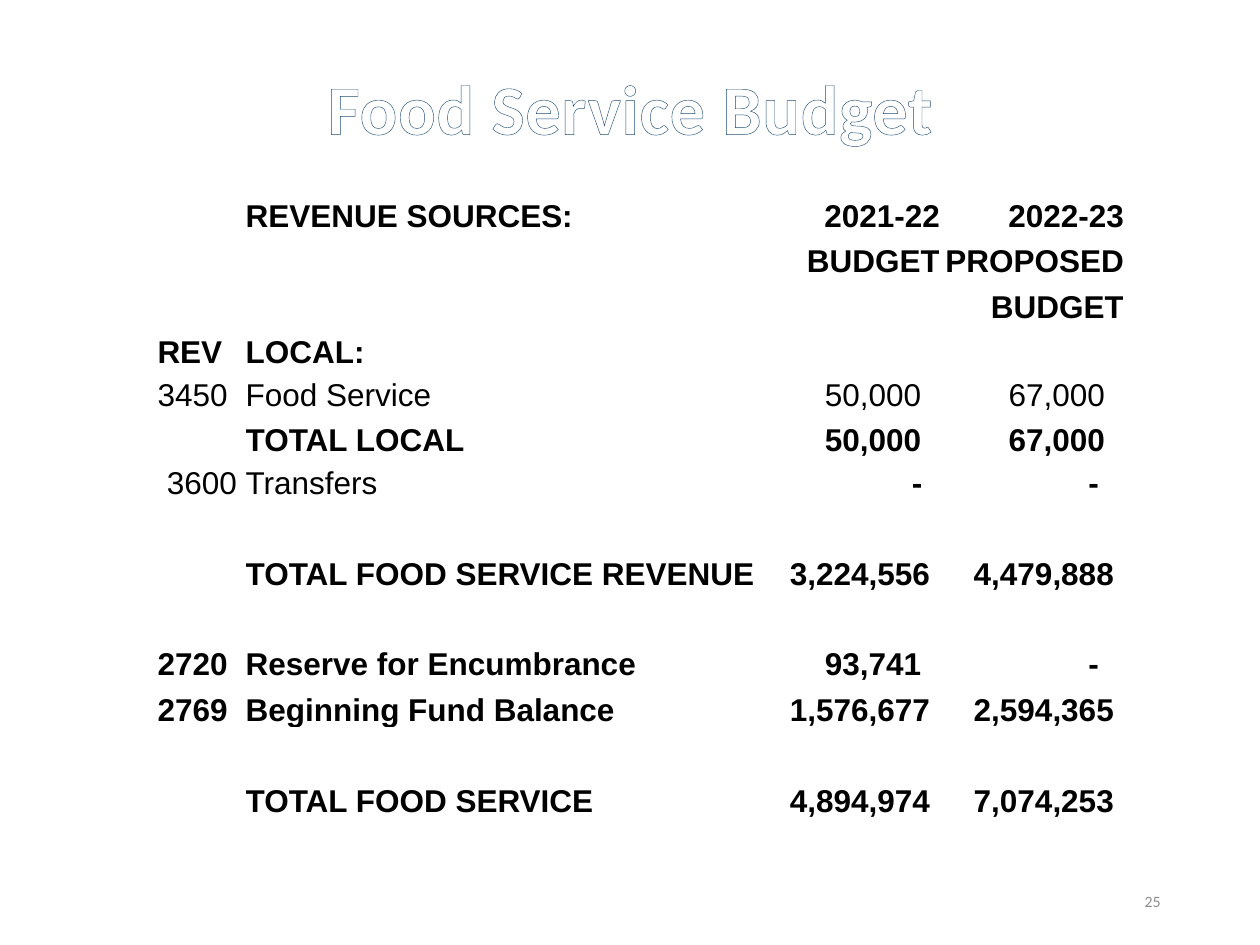
from lxml import etree
from pptx import Presentation
from pptx import util as u
from pptx.dml.color import RGBColor
from pptx.enum import text
from pptx.oxml.ns import qn

BLACK = RGBColor(0x00, 0x00, 0x00)
WHITE = RGBColor(0xFF, 0xFF, 0xFF)
GREY = RGBColor(0x8C, 0x8C, 0x8C)
OUTLINE = "1F4E79"

TITLE = "Food Service Budget"
PAGE = "25"
BLANK = ("", "", "", "")
BUDGET = [
    ("", "REVENUE SOURCES:", "2021-22", "2022-23"),
    ("", "", "BUDGET", "PROPOSED"),
    ("", "", "", "BUDGET"),
    ("REV", "LOCAL:", "", ""),
    ("3450", "Food Service", "50,000", "67,000"),
    ("", "TOTAL LOCAL", "50,000", "67,000"),
    ("3600", "Transfers", "-", "-"),
    BLANK,
    ("", "TOTAL FOOD SERVICE REVENUE", "3,224,556", "4,479,888"),
    BLANK,
    ("2720", "Reserve for Encumbrance", "93,741", "-"),
    ("2769", "Beginning Fund Balance", "1,576,677", "2,594,365"),
    BLANK,
    ("", "TOTAL FOOD SERVICE", "4,894,974", "7,074,253"),
]
COLUMN_WIDTHS = (0.7, 4.05, 1.46, 1.46)
ROW_HEIGHT, PLAIN_ROW_HEIGHT = 0.36, 0.34
PLAIN_ACCOUNTS = ("3450", "3600")
TRANSFERS = "3600"


def style(paragraph, align, **font_format):
    paragraph.alignment = align
    color = font_format.pop("color")
    for name, value in font_format.items():
        setattr(paragraph.font, name, value)
        for run in paragraph.runs:
            setattr(run.font, name, value)
    for run in paragraph.runs:
        run.font.color.rgb = color


def place(shape, left, top, width, height):
    shape.left, shape.top = u.Inches(left), u.Inches(top)
    shape.width, shape.height = u.Inches(width), u.Inches(height)


def right_margin(value, column):
    """Inset that lines amounts up in accounting style; headings sit flush."""
    if value == "-":
        return 0.14 if column == 2 else 0.2
    if "," in value:
        return 0.08 if value.count(",") == 2 else 0.15
    return 0


def add_title(slide):
    title = slide.shapes.title
    place(title, 2.5, -0.02, 5.83, 1.25)
    frame = title.text_frame
    frame.text = TITLE
    frame.auto_size = text.MSO_AUTO_SIZE.NONE
    frame.vertical_anchor = text.MSO_ANCHOR.BOTTOM
    style(frame.paragraphs[0], text.PP_ALIGN.LEFT, name="Calibri",
          size=u.Pt(40), bold=True, color=WHITE)
    letters = frame.paragraphs[0].runs[0].font._element
    letters.set("spc", "50")
    line = etree.Element(qn("a:ln"), w=str(u.Pt(1.05)))
    fill = etree.SubElement(line, qn("a:solidFill"))
    etree.SubElement(fill, qn("a:srgbClr"), val=OUTLINE)
    letters.insert(0, line)


def add_budget(slide):
    table = slide.shapes.add_table(
        len(BUDGET), len(COLUMN_WIDTHS), u.Inches(1.25), u.Inches(1.5),
        u.Inches(sum(COLUMN_WIDTHS)), u.Inches(5)).table
    table.first_row = table.horz_banding = False
    for column, width in zip(table.columns, COLUMN_WIDTHS):
        column.width = u.Inches(width)
    for r, entries in enumerate(BUDGET):
        plain = entries[0] in PLAIN_ACCOUNTS
        table.rows[r].height = u.Inches(PLAIN_ROW_HEIGHT if plain else ROW_HEIGHT)
        for c, value in enumerate(entries):
            cell = table.cell(r, c)
            cell.fill.background()
            cell.vertical_anchor = text.MSO_ANCHOR.BOTTOM
            cell.margin_left = cell.margin_top = cell.margin_bottom = 0
            cell.margin_right = u.Inches(right_margin(value, c))
            cell.text = value
            align = text.PP_ALIGN.RIGHT if c >= 2 else text.PP_ALIGN.LEFT
            if value == TRANSFERS:
                align = text.PP_ALIGN.RIGHT
                cell.margin_right = u.Inches(0.07)
            style(cell.text_frame.paragraphs[0], align, name="Arial",
                  size=u.Pt(18), bold=not plain or value == "-", color=BLACK)


def add_page_number(slide):
    number = slide.shapes.add_textbox(0, 0, 0, 0)
    place(number, 7.06, 6.95, 2.25, 0.4)
    frame = number.text_frame
    frame.word_wrap = True
    frame.vertical_anchor = text.MSO_ANCHOR.MIDDLE
    frame.text = PAGE
    style(frame.paragraphs[0], text.PP_ALIGN.RIGHT, name="Calibri",
          size=u.Pt(9), color=GREY)


def main():
    deck = Presentation()
    deck.slide_width, deck.slide_height = u.Inches(10), u.Inches(7.5)
    slide = deck.slides.add_slide(deck.slide_layouts.get_by_name("Title Only"))
    add_page_number(slide)
    add_title(slide)
    add_budget(slide)
    deck.save("out.pptx")


if __name__ == "__main__":
    main()
